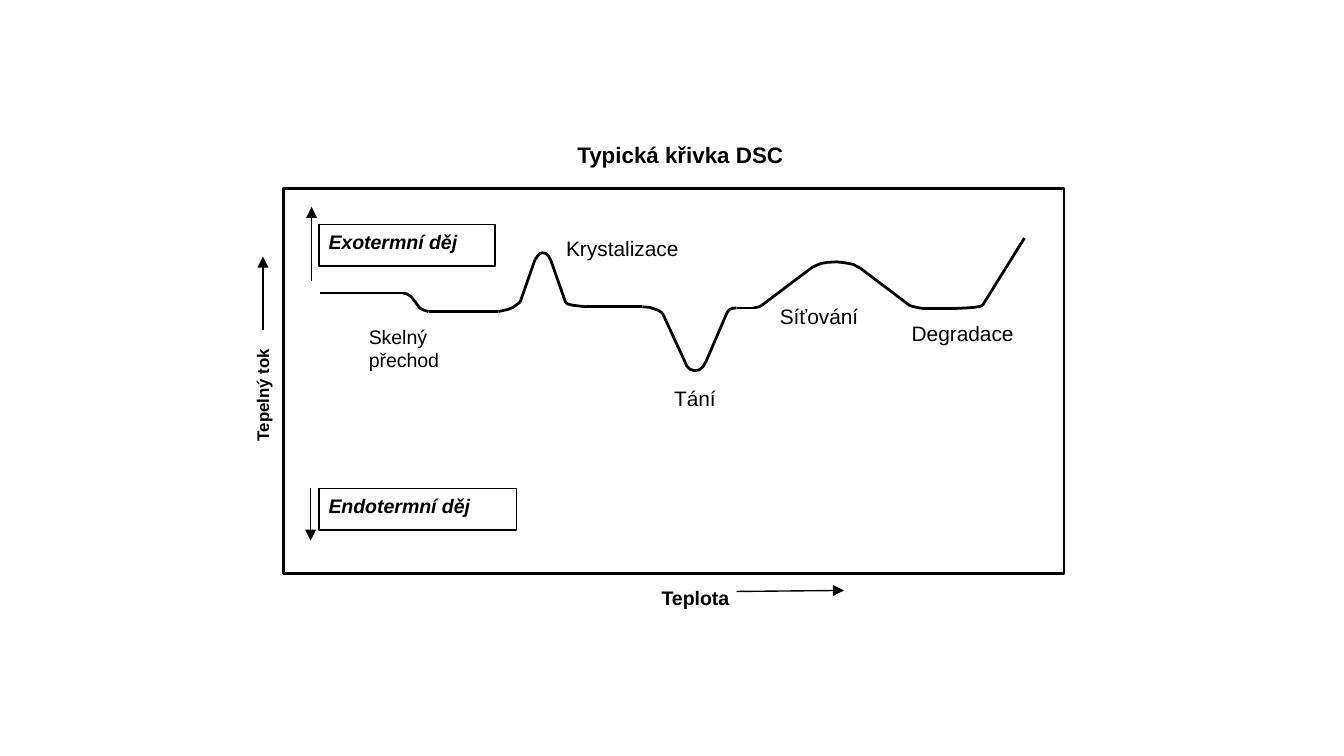
from lxml import etree
from pptx import Presentation
from pptx.dml.color import RGBColor
from pptx.enum.shapes import MSO_CONNECTOR, MSO_SHAPE
from pptx.enum.text import MSO_ANCHOR, MSO_AUTO_SIZE, PP_ALIGN
from pptx.oxml.ns import qn
from pptx.util import Cm, Pt

STRAIGHT = MSO_CONNECTOR.STRAIGHT
RECTANGLE = MSO_SHAPE.RECTANGLE
TOP = MSO_ANCHOR.TOP
NO_AUTOFIT = MSO_AUTO_SIZE.NONE
LEFT, CENTER = PP_ALIGN.LEFT, PP_ALIGN.CENTER

FONT = "Arial"
BLACK, WHITE = "000000", "FFFFFF"
THIN, THICK = 0.75, 1.47
TITLE_ONLY = 5

# Diagram frame on the slide: left, top, width, height in cm
FRAME = (5.36, 3.56, 14.75, 7.28)

# Bends of the DSC curve in cm from the frame's top left corner;
# straight lines join each bend to the next
CURVE_START, CURVE_END = (0.69, 1.98), (14, 0.94)
BENDS = [
    # glass transition
    [(2.26, 1.98), (2.34, 2), (2.41, 2.05), (2.49, 2.15), (2.57, 2.26),
     (2.64, 2.3), (2.74, 2.33)],
    # crystallisation
    [(4.06, 2.33), (4.24, 2.29), (4.34, 2.25), (4.42, 2.19), (4.47, 2.15)],
    [(4.75, 1.35), (4.8, 1.28), (4.85, 1.23), (4.9, 1.22), (4.95, 1.23),
     (5, 1.27), (5.05, 1.36)],
    [(5.33, 2.16), (5.38, 2.19), (5.46, 2.21), (5.54, 2.22), (5.72, 2.24)],
    # melting
    [(6.78, 2.24), (6.91, 2.25), (7.01, 2.28), (7.09, 2.31), (7.16, 2.36)],
    [(7.59, 3.29), (7.62, 3.36), (7.68, 3.42), (7.77, 3.45), (7.86, 3.43),
     (7.93, 3.37), (7.98, 3.28)],
    [(8.38, 2.35), (8.43, 2.29), (8.48, 2.27), (8.56, 2.26)],
    # cross-linking
    [(8.89, 2.26), (8.99, 2.24), (9.04, 2.21)],
    [(9.98, 1.5), (10.08, 1.45), (10.16, 1.42), (10.28, 1.4), (10.45, 1.39),
     (10.62, 1.41), (10.77, 1.44), (10.9, 1.51)],
    [(11.84, 2.22), (11.96, 2.25), (12.07, 2.27)],
    # degradation
    [(12.73, 2.27), (12.93, 2.26), (13.06, 2.25), (13.17, 2.23), (13.21, 2.21)],
]

# Text, box relative to the frame, size
CURVE_LABELS = [
    ("Skelný\npřechod", (1.61, 2.58, 2.31, 0.94), 10.5),
    ("Krystalizace", (5.34, 0.89, 2.62, 0.38), 11.2),
    ("Tání", (7.38, 3.73, 1.42, 0.38), 11.2),
    (" Síťování", (9.27, 2.18, 2.59, 0.51), 11.2),
    ("Degradace", (11.87, 2.51, 2.74, 0.43), 11.2),
]

# Text, box relative to the frame, arrow start and end
DIRECTIONS = [
    ("Exotermní děj", (0.67, 0.68, 3.33, 0.79), (0.53, 1.75), (0.53, 0.35)),
    ("Endotermní děj", (0.67, 5.67, 3.73, 0.79), (0.51, 5.67), (0.51, 6.66)),
]


def color(value):
    return RGBColor.from_string(value)


def place(frame, box):
    """Turn a box relative to the frame into slide lengths."""
    left, top, width, height = box
    return Cm(frame[0] + left), Cm(frame[1] + top), Cm(width), Cm(height)


def place_point(frame, point):
    return Cm(frame[0] + point[0]), Cm(frame[1] + point[1])


def set_line(shape, width):
    shape.line.color.rgb = color(BLACK)
    shape.line.width = Pt(width)


def write(shape, text, size, bold=False, italic=False, align=LEFT, inset=(0, 0)):
    text_frame = shape.text_frame
    text_frame.word_wrap = True
    text_frame.auto_size = NO_AUTOFIT
    text_frame.vertical_anchor = TOP
    text_frame.margin_left = text_frame.margin_right = Cm(inset[0])
    text_frame.margin_top = text_frame.margin_bottom = Cm(inset[1])
    text_frame.text = text
    for paragraph in text_frame.paragraphs:
        paragraph.alignment = align
        for run in paragraph.runs:
            run.font.name = FONT
            run.font.size = Pt(size)
            run.font.bold = bold
            run.font.italic = italic
            run.font.color.rgb = color(BLACK)


def add_label(slide, frame, text, box, size, **style):
    label = slide.shapes.add_textbox(*place(frame, box))
    write(label, text, size, **style)
    return label


def add_line(slide, frame, start, end, width):
    line = slide.shapes.add_connector(
        STRAIGHT, *place_point(frame, start), *place_point(frame, end))
    set_line(line, width)
    etree.SubElement(line._element.spPr, qn("a:effectLst"))
    return line


def add_arrow(slide, frame, start, end):
    arrow = add_line(slide, frame, start, end, THIN)
    outline = arrow._element.spPr.find(qn("a:ln"))
    etree.SubElement(outline, qn("a:tailEnd"), type="triangle")


def add_bend(slide, frame, bend):
    points = [place_point(frame, point) for point in bend]
    builder = slide.shapes.build_freeform(*points[0])
    builder.add_line_segments(points[1:], close=False)
    shape = builder.convert_to_shape()
    shape.shadow.inherit = False
    shape.fill.background()
    set_line(shape, THICK)


def add_title(slide, frame):
    title = slide.shapes.title
    title.left, title.top, title.width, title.height = place(
        frame, (5.37, -0.99, 4.62, 0.79))
    write(title, "Typická křivka DSC", 12, bold=True, inset=(0.18, 0.1))


def add_plot(slide, frame):
    # Border
    border = slide.shapes.add_shape(RECTANGLE, *place(frame, (0, 0, *frame[2:])))
    border.shadow.inherit = False
    border.fill.background()
    set_line(border, THICK)

    # Curve
    line_start = CURVE_START
    for bend in BENDS:
        add_line(slide, frame, line_start, bend[0], THICK)
        add_bend(slide, frame, bend)
        line_start = bend[-1]
    add_line(slide, frame, line_start, CURVE_END, THICK)

    for text, box, size in CURVE_LABELS:
        add_label(slide, frame, text, box, size)


def add_directions(slide, frame):
    for text, box, start, end in DIRECTIONS:
        panel = slide.shapes.add_shape(RECTANGLE, *place(frame, box))
        panel.shadow.inherit = False
        panel.fill.solid()
        panel.fill.fore_color.rgb = color(WHITE)
        set_line(panel, THIN)
        write(panel, text, 10.5, bold=True, italic=True, inset=(0.18, 0.1))
        add_arrow(slide, frame, start, end)


def add_axes(slide, frame):
    # Temperature
    add_label(slide, frame, "Teplota", (6.25, 7.52, 3.07, 0.51), 10.5,
              bold=True, align=CENTER)
    add_arrow(slide, frame, (8.56, 7.62), (10.59, 7.6))
    # Heat flow
    heat_flow = add_label(slide, frame, "Tepelný tok", (-1.76, 3.23, 2.72, 0.58), 9,
                          bold=True, inset=(0.1, 0.1))
    heat_flow.rotation = 270
    add_arrow(slide, frame, (-0.39, 2.68), (-0.39, 1.29))


def main():
    presentation = Presentation()
    presentation.slide_width = Cm(25.4)
    presentation.slide_height = Cm(14.29)
    slide = presentation.slides.add_slide(presentation.slide_layouts[TITLE_ONLY])
    add_title(slide, FRAME)
    add_plot(slide, FRAME)
    add_directions(slide, FRAME)
    add_axes(slide, FRAME)
    presentation.save("out.pptx")


if __name__ == "__main__":
    main()
